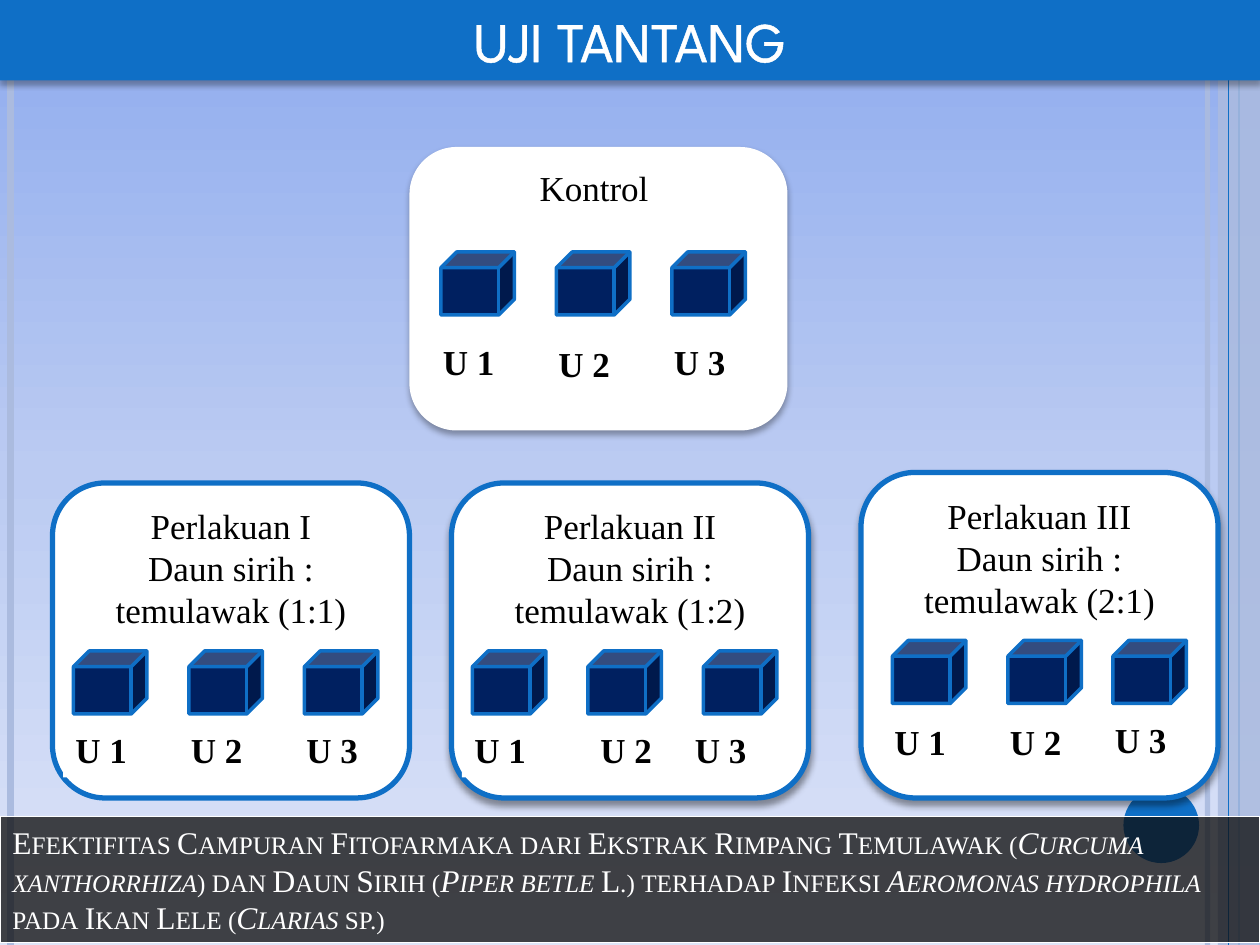
import pptx
import pptx.util
import pptx.dml.color
import pptx.enum.shapes
import pptx.enum.text
import pptx.oxml
import pptx.oxml.ns
from lxml import etree

Pt = pptx.util.Pt
SHAPE = pptx.enum.shapes.MSO_SHAPE
ALIGN = pptx.enum.text.PP_ALIGN
ANCHOR = pptx.enum.text.MSO_ANCHOR
qn = pptx.oxml.ns.qn
NS = 'xmlns:a="http://schemas.openxmlformats.org/drawingml/2006/main"'

W, H = 720, 540
SERIF, DISPLAY = "Times New Roman", "League Spartan"
COLORS = {
    "sky_top": "8EABEE", "sky_mid": "BBCBF2", "sky_low": "DEE5F8",
    "blue": "0F6FC6", "haze": "ABBBDF", "navy": "002060",
    "white": "FFFFFF", "black": "000000", "dark": "0D0D0D",
}


def rgb(name):
    return pptx.dml.color.RGBColor.from_string(COLORS[name])


def set_alpha(fill_owner, percent):
    """Set the opacity of the first solid colour inside a shape's spPr or line."""
    color = next(fill_owner.iter(qn("a:srgbClr")))
    etree.SubElement(color, qn("a:alpha")).set("val", str(percent * 1000))


def add_box(slide, kind, box, fill, line=None, width=0, alpha=None):
    sp = slide.shapes.add_shape(kind, *(Pt(v) for v in box))
    sp.shadow.inherit = False
    sp.fill.solid()
    sp.fill.fore_color.rgb = rgb(fill)
    if alpha:
        set_alpha(sp.fill._xPr, alpha)
    if line:
        sp.line.color.rgb = rgb(line)
        sp.line.width = Pt(width)
    else:
        sp.line.fill.background()
    return sp


def add_shadow(sp, alpha, blur, dist):
    effects = sp.element.spPr.find(qn("a:effectLst"))
    effects.append(pptx.oxml.parse_xml(
        f'<a:outerShdw {NS} blurRad="{Pt(blur)}" dist="{Pt(dist)}" dir="5400000" '
        f'rotWithShape="0"><a:srgbClr val="{COLORS["black"]}">'
        f'<a:alpha val="{alpha * 1000}"/></a:srgbClr></a:outerShdw>'))


def set_text(sp, lines, size, color, align=ALIGN.LEFT, font=SERIF, bold=False):
    tf = sp.text_frame
    tf.word_wrap = True
    tf.vertical_anchor = ANCHOR.TOP
    tf.text = "\n".join(lines)
    for p in tf.paragraphs:
        p.alignment = align
        for r in p.runs:
            style_run(r, size, color, font, bold)


def style_run(r, size, color, font=SERIF, bold=False):
    r.font.size = Pt(size)
    r.font.name = font
    r.font.bold = bold
    r.font.color.rgb = rgb(color)


def add_backdrop(slide):
    stops = "".join(
        f'<a:gs pos="{pos * 1000}"><a:srgbClr val="{COLORS[name]}"/></a:gs>'
        for pos, name in ((0, "sky_top"), (50, "sky_mid"), (100, "sky_low")))
    slide.background.fill.solid()
    bg_pr = next(slide.element.iter(qn("p:bgPr")))
    bg_pr.replace(bg_pr[0], pptx.oxml.parse_xml(
        f'<a:gradFill {NS}><a:gsLst>{stops}</a:gsLst>'
        '<a:lin ang="5400000" scaled="0"/></a:gradFill>'))

    add_rule(slide, 690, "haze", 3, alpha=93)
    add_rule(slide, 6, "haze", 4.5)
    add_rule(slide, 708, "blue", 1.5)
    add_box(slide, SHAPE.RECTANGLE, (696, 0, 24, H), "haze", alpha=87)
    add_rule(slide, 702, "blue", 0.75)
    add_box(slide, SHAPE.OVAL, (642, 450, 43.2, 43.2), "blue")


def add_rule(slide, x, color, width, alpha=None):
    """Draw a vertical line over the full slide height."""
    cx = slide.shapes.add_connector(
        pptx.enum.shapes.MSO_CONNECTOR.STRAIGHT, Pt(x), Pt(0), Pt(x), Pt(H))
    cx.line.color.rgb = rgb(color)
    cx.line.width = Pt(width)
    if alpha:
        set_alpha(cx.line._ln, alpha)
    etree.SubElement(cx.element.spPr, qn("a:effectLst"))


def add_title(slide, box):
    sp = add_box(slide, SHAPE.RECTANGLE, box, "blue")
    add_shadow(sp, 32, 3.5, 2.2)
    set_text(sp, ["UJI TANTANG"], 32, "white", ALIGN.CENTER, DISPLAY)
    r_pr = sp.text_frame.paragraphs[0].runs[0].font._element
    r_pr.insert(0, pptx.oxml.parse_xml(
        f'<a:ln {NS} w="{Pt(1.45)}"><a:solidFill>'
        f'<a:srgbClr val="{COLORS["white"]}"/></a:solidFill></a:ln>'))


def add_panel(slide, box, lines, cube_y, cube_xs, labels, outlined=True, shadow=None):
    """Draw a treatment card; cubes and labels are offsets from its corner."""
    left, top = box[:2]
    sp = add_box(slide, SHAPE.ROUNDED_RECTANGLE, box, "white",
                 "blue" if outlined else None, 3)
    if shadow:
        add_shadow(sp, *shadow)
    set_text(sp, lines, 20, "black", ALIGN.CENTER)
    for x in cube_xs:
        add_box(slide, SHAPE.CUBE, (left + x, top + cube_y, 42, 36), "navy", "blue", 2)
    for number, (x, y) in enumerate(labels, 1):
        label = add_box(slide, SHAPE.RECTANGLE, (left + x, top + y, 48, 31.5), "white")
        set_text(label, [f"U {number}"], 20, "black", bold=True)


def add_caption(slide, box):
    sp = add_box(slide, SHAPE.RECTANGLE, box, "dark", "white", 0.75, alpha=76)
    tf = sp.text_frame
    tf.word_wrap = True
    tf.vertical_anchor = ANCHOR.MIDDLE
    p = tf.paragraphs[0]
    p.alignment = ALIGN.LEFT
    parts = ("Efektifitas Campuran Fitofarmaka dari Ekstrak Rimpang Temulawak (",
             "Curcuma xanthorrhiza", ") dan Daun Sirih (", "Piper betle",
             " L.) terhadap Infeksi ", "Aeromonas hydrophila ",
             "pada Ikan Lele (", "Clarias", " sp.)")
    for i, text in enumerate(parts):
        r = p.add_run()
        r.text = text
        style_run(r, 18, "white")
        r.font.italic = i % 2 == 1  # Latin species names alternate with prose
        r.font._element.set("cap", "small")


def main():
    prs = pptx.Presentation()
    prs.slide_width, prs.slide_height = Pt(W), Pt(H)
    slide = prs.slides.add_slide(prs.slide_layouts[6])

    add_backdrop(slide)
    add_title(slide, (0, 0, W, 46))
    soft, strong = (32, 3.5, 2.2), (40, 4, 3)
    add_panel(slide, (258, 276, 204, 180),
              ["Perlakuan II", "Daun sirih : temulawak (1:2)"],
              96, (12, 78, 144), ((6, 136.8), (78, 136.8), (132, 136.8)), shadow=strong)
    add_panel(slide, (492, 270, 204, 186),
              ["Perlakuan III", "Daun sirih : temulawak (2:1)"],
              96, (18, 84, 144), ((12, 138), (78, 138), (138, 136.8)), shadow=strong)
    add_panel(slide, (30, 276, 204, 180),
              ["Perlakuan I", "Daun sirih : temulawak (1:1)"],
              96, (12, 78, 144), ((6, 136.8), (72, 136.8), (138, 136.8)))
    add_panel(slide, (234, 84, 216, 162), ["Kontrol "],
              60, (18, 84, 150), ((12, 106.8), (78, 108), (144, 106.8)),
              outlined=False, shadow=soft)
    add_caption(slide, (0, 466.6, W, 72))

    prs.save("out.pptx")


if __name__ == "__main__":
    main()
